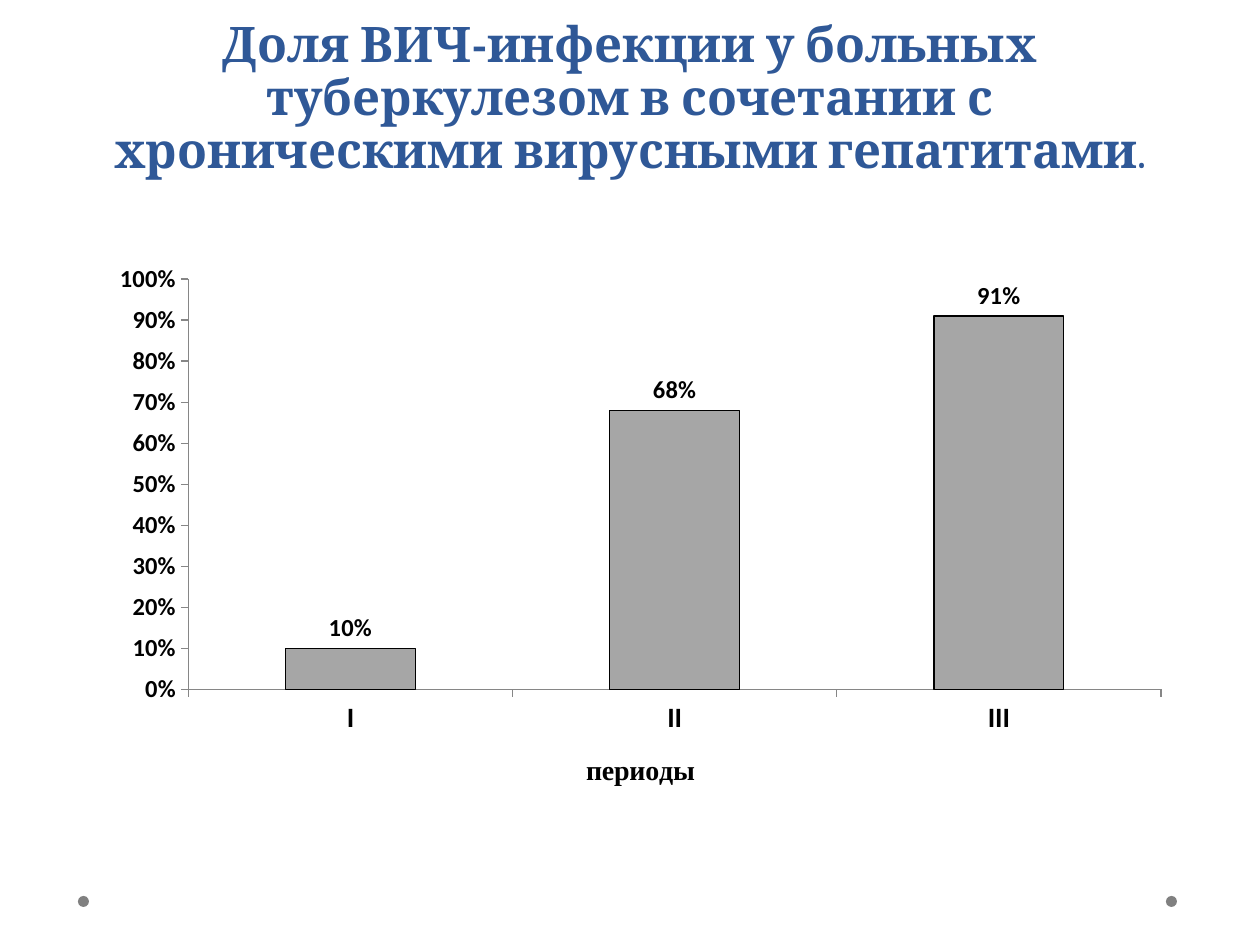
from lxml import etree
from pptx import Presentation
from pptx.chart.data import CategoryChartData
from pptx.dml.color import RGBColor
from pptx.enum.chart import XL_CHART_TYPE as ChartType, XL_LABEL_POSITION as LabelPosition, XL_TICK_MARK as TickMark
from pptx.enum.shapes import MSO_SHAPE as Shape
from pptx.enum.text import MSO_ANCHOR as Anchor, PP_ALIGN as Align
from pptx.oxml.ns import qn
from pptx.util import Emu, Pt

PX = 914400 // 126


def px(*lengths):
    return [Emu(length * PX) for length in lengths]


def paint(color_format, color):
    color_format.rgb = RGBColor.from_string(color)


def style_font(font, size, name, color="000000", bold=True):
    font.size = Pt(size)
    font.name = name
    font.bold = bold
    paint(font.color, color)


def fill_solid(fill, color):
    fill.solid()
    paint(fill.fore_color, color)


def add_dots(slide, left, top, width, size):
    for x in (left, left + width - size):
        dot = slide.shapes.add_shape(Shape.OVAL, *px(x, top, size, size))
        dot.shadow.inherit = False
        fill_solid(dot.fill, "808080")
        dot.line.fill.background()


def add_title(slide, left, top, width, height, parts):
    frame = slide.shapes.add_textbox(*px(left, top, width, height)).text_frame
    frame.word_wrap = True
    frame.vertical_anchor = Anchor.BOTTOM
    paragraph = frame.paragraphs[0]
    paragraph.alignment = Align.CENTER
    paragraph.line_spacing = 0.9
    for text, size in parts:
        run = paragraph.add_run()
        run.text = text
        style_font(run.font, size, "Cambria", "2F5897")


def set_plot_layout(chart, **fractions):
    plot_area = chart._chartSpace.chart.plotArea
    for old in plot_area.findall(qn("c:layout")):
        plot_area.remove(old)
    layout = etree.Element(qn("c:layout"))
    manual = etree.SubElement(layout, qn("c:manualLayout"))
    settings = {"layoutTarget": "inner", "xMode": "edge", "yMode": "edge", **fractions}
    for tag, value in settings.items():
        etree.SubElement(manual, qn(f"c:{tag}")).set("val", str(value))
    plot_area.insert(0, layout)


def style_axis(axis, size):
    axis.has_major_gridlines = False
    axis.major_tick_mark = TickMark.OUTSIDE
    axis.minor_tick_mark = TickMark.NONE
    style_font(axis.tick_labels.font, size, "Calibri")
    fill_solid(axis.format.line.fill, "868686")
    axis.format.line.width = Pt(0.75)


def add_share_chart(slide, left, top, width, height, shares):
    data = CategoryChartData(number_format="0%")
    data.categories = list(shares)
    data.add_series("Series 1", list(shares.values()))
    chart = slide.shapes.add_chart(
        ChartType.COLUMN_CLUSTERED, *px(left, top, width, height), data).chart
    chart.has_legend = False
    chart.has_title = False
    style_font(chart.font, 17, "Calibri", bold=False)
    set_plot_layout(chart, x=0.11, y=0.06, w=0.86, h=0.7)

    periods, percents = chart.category_axis, chart.value_axis
    style_axis(periods, 16)
    style_axis(percents, 14)
    title = periods.axis_title.text_frame
    title.text = "периоды"
    style_font(title.paragraphs[0].runs[0].font, 16, "Times New Roman")
    percents.minimum_scale, percents.maximum_scale, percents.major_unit = 0, 1, 0.1
    percents.tick_labels.number_format = "0%"
    percents.tick_labels.number_format_is_linked = False

    plot = chart.plots[0]
    plot.gap_width = 150
    plot.vary_by_categories = False
    column_format = plot.series[0].format
    fill_solid(column_format.fill, "A6A6A6")
    fill_solid(column_format.line.fill, "000000")
    column_format.line.width = Pt(0.75)
    labels = plot.series[0].data_labels
    labels.show_value = True
    labels.number_format = "0%"
    labels.number_format_is_linked = False
    labels.position = LabelPosition.OUTSIDE_END
    style_font(labels.font, 14, "Calibri")


def main():
    presentation = Presentation()
    presentation.slide_width, presentation.slide_height = px(1260, 945)
    slide = presentation.slides.add_slide(presentation.slide_layouts[6])
    add_dots(slide, 78, 896, 1099, 11)
    add_title(slide, 63, 0, 1134, 185, [
        ("Доля ВИЧ-инфекции у больных туберкулезом в сочетании с "
         "хроническими вирусными гепатитами", 28),
        (".", 20),
    ])
    add_share_chart(slide, 64, 244, 1131, 586, {"I": 0.1, "II": 0.68, "III": 0.91})
    presentation.save("out.pptx")


if __name__ == "__main__":
    main()
